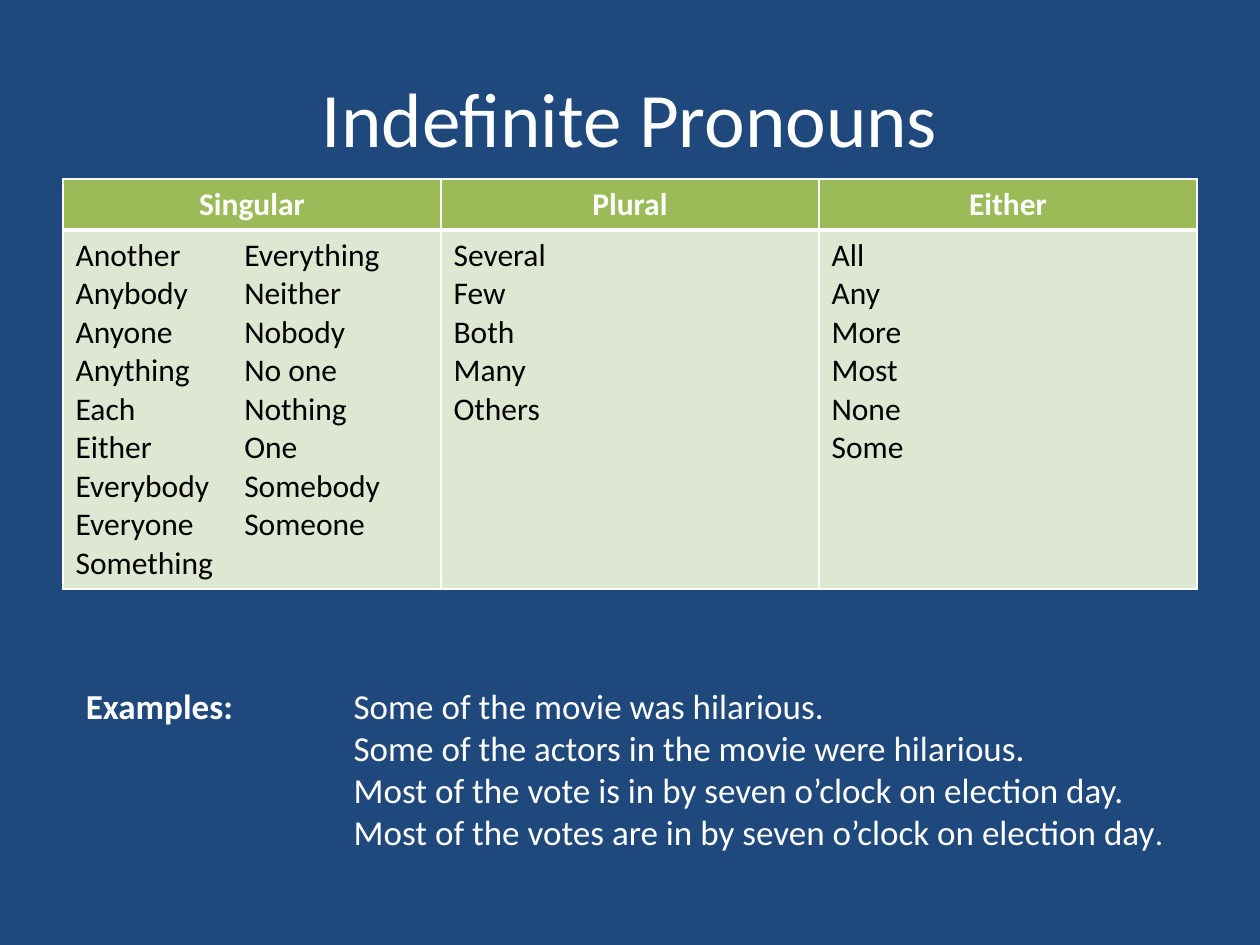
from dataclasses import dataclass
from itertools import zip_longest

from lxml.etree import SubElement
from pptx import Presentation
from pptx.dml.color import RGBColor
from pptx.enum.text import MSO_ANCHOR, PP_ALIGN
from pptx.oxml.ns import qn
from pptx.util import Cm, Pt


@dataclass(frozen=True)
class Theme:
    font: str = "Calibri"
    background: str = "1F497D"
    light: str = "FFFFFF"
    dark: str = "000000"
    header_fill: str = "9BBB59"
    body_fill: str = "DEE7D1"
    title_size: int = 44
    table_size: int = 18
    example_size: int = 20
    thin_line: int = 1
    thick_line: int = 3


SINGULAR_LEFT = ["Another", "Anybody", "Anyone", "Anything", "Each", "Either",
                 "Everybody", "Everyone", "Something"]
SINGULAR_RIGHT = ["Everything", "Neither", "Nobody", "No one", "Nothing", "One",
                  "Somebody", "Someone"]
PRONOUNS = {
    "Singular": ["\t".join(filter(None, pair))
                 for pair in zip_longest(SINGULAR_LEFT, SINGULAR_RIGHT)],
    "Plural": ["Several", "Few", "Both", "Many", "Others"],
    "Either": ["All", "Any", "More", "Most", "None", "Some"],
}
EXAMPLES = [
    "Some of the movie was hilarious.",
    "Some of the actors in the movie were hilarious.",
    "Most of the vote is in by seven o’clock on election day.",
    "Most of the votes are in by seven o’clock on election day",
]


def apply_format(target, values):
    for name, value in values.items():
        setattr(target, name, value)


class SlideBuilder:
    def __init__(self, presentation, theme):
        self.theme = theme
        self.slide = presentation.slides.add_slide(presentation.slide_layouts[5])
        fill = self.slide.background.fill
        fill.solid()
        fill.fore_color.rgb = RGBColor.from_string(theme.background)

    def add_run(self, paragraph, text, size, color, bold=False):
        run = paragraph.add_run()
        run.text = text
        apply_format(run.font, {"name": self.theme.font, "size": Pt(size), "bold": bold})
        run.font.color.rgb = RGBColor.from_string(color)

    def add_paragraphs(self, frame, count):
        return [frame.paragraphs[0]] + [frame.add_paragraph() for _ in range(count - 1)]

    def add_title(self, text, left, top, width, height):
        title = self.slide.shapes.title
        apply_format(title, {"left": left, "top": top, "width": width, "height": height})
        title.text_frame.vertical_anchor = MSO_ANCHOR.MIDDLE
        paragraph = title.text_frame.paragraphs[0]
        paragraph.alignment = PP_ALIGN.CENTER
        self.add_run(paragraph, text, self.theme.title_size, self.theme.light)

    def add_tab_stop(self, paragraph, position):
        properties = paragraph._p.get_or_add_pPr()
        tab_list = SubElement(properties, qn("a:tabLst"))
        SubElement(tab_list, qn("a:tab"), pos=str(position), algn="l")

    def style_cell(self, cell, fill_color, line_widths):
        properties = cell._tc.get_or_add_tcPr()
        for side, width in line_widths.items():
            line = SubElement(properties, qn(f"a:ln{side}"), w=str(Pt(width)))
            solid = SubElement(line, qn("a:solidFill"))
            SubElement(solid, qn("a:srgbClr"), val=self.theme.light)
        cell.fill.solid()
        cell.fill.fore_color.rgb = RGBColor.from_string(fill_color)

    def add_table(self, columns, left, top, width, row_heights, tab_position):
        theme = self.theme
        table = self.slide.shapes.add_table(
            len(row_heights), len(columns), left, top, width, sum(row_heights)).table
        for row, height in zip(table.rows, row_heights):
            row.height = height
        thin = dict.fromkeys("LRTB", theme.thin_line)
        for index, (heading, words) in enumerate(columns.items()):
            header, body = table.cell(0, index), table.cell(1, index)
            self.style_cell(header, theme.header_fill, {**thin, "B": theme.thick_line})
            self.style_cell(body, theme.body_fill, {**thin, "T": theme.thick_line})
            paragraph = header.text_frame.paragraphs[0]
            paragraph.alignment = PP_ALIGN.CENTER
            self.add_run(paragraph, heading, theme.table_size, theme.light, True)
            paragraphs = self.add_paragraphs(body.text_frame, len(words))
            for paragraph, word in zip(paragraphs, words):
                if "\t" in word:
                    self.add_tab_stop(paragraph, tab_position)
                self.add_run(paragraph, word, theme.table_size, theme.dark)

    def add_examples(self, label, sentences, left, top, width, height, indent):
        theme = self.theme
        frame = self.slide.shapes.add_textbox(left, top, width, height).text_frame
        frame.word_wrap = True
        paragraphs = self.add_paragraphs(frame, len(sentences))
        for paragraph, sentence in zip(paragraphs, sentences):
            properties = paragraph._p.get_or_add_pPr()
            properties.set("marL", str(indent))
            if paragraph is paragraphs[0]:
                properties.set("indent", str(-indent))
                self.add_tab_stop(paragraph, indent)
                self.add_run(paragraph, f"{label}\t", theme.example_size, theme.light, True)
            self.add_run(paragraph, sentence, theme.example_size, theme.light)
        self.add_run(paragraphs[-1], ".", theme.table_size, theme.light)


def main():
    presentation = Presentation()
    apply_format(presentation, {"slide_width": Cm(25.4), "slide_height": Cm(19.05)})
    builder = SlideBuilder(presentation, Theme())
    builder.add_title("Indefinite Pronouns", Cm(1.27), Cm(0.76), Cm(22.86), Cm(3.18))
    builder.add_table(PRONOUNS, Cm(1.27), Cm(3.61), Cm(22.86), [Cm(1.03), Cm(7.2)], Cm(3.4))
    builder.add_examples("Examples:", EXAMPLES, Cm(1.48), Cm(13.67), Cm(22.43), Cm(3.68),
                         Cm(5.4))
    presentation.save("out.pptx")


if __name__ == "__main__":
    main()
